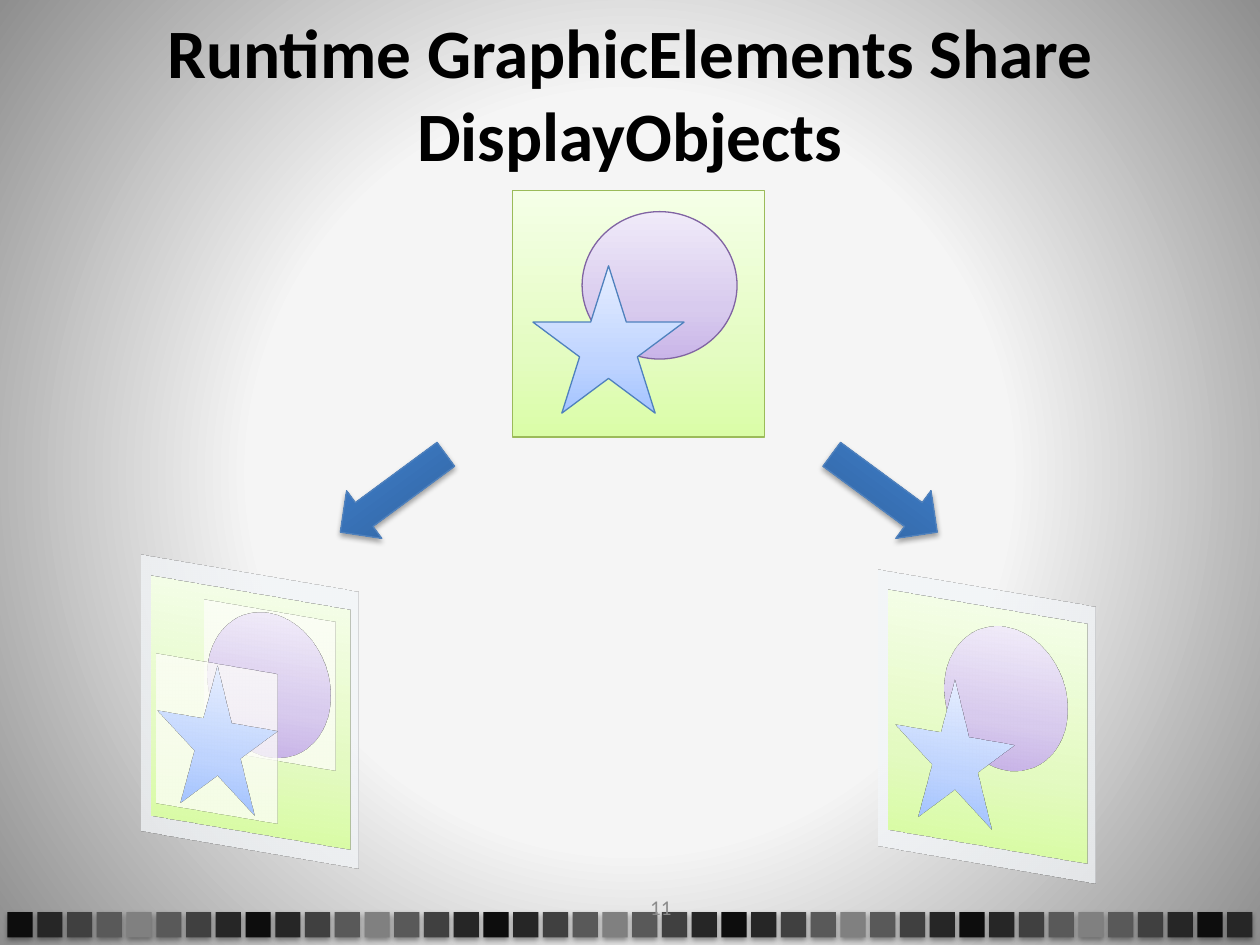
from lxml import etree
from pptx import Presentation
from pptx.dml.color import RGBColor
from pptx.enum.dml import MSO_LINE
from pptx.enum.shapes import MSO_SHAPE
from pptx.enum.text import MSO_ANCHOR, PP_ALIGN
from pptx.oxml import parse_xml
from pptx.oxml.ns import nsdecls
from pptx.util import Inches, Pt

BLACK = RGBColor(0x00, 0x00, 0x00)
NUMBER_GRAY = RGBColor(0x8C, 0x8C, 0x8C)
FRAME_GRAY = RGBColor(0xDA, 0xDD, 0xE0)
PANE_TAN = RGBColor(0xEE, 0xEC, 0xE1)
GREEN_LINE = RGBColor(0x9B, 0xBB, 0x59)
PURPLE_LINE = RGBColor(0x80, 0x64, 0xA2)
BLUE_LINE = RGBColor(0x4F, 0x81, 0xBD)
STRIP_GRAYS = [RGBColor(v, v, v) for v in
               (0x0D, 0x26, 0x40, 0x59, 0x80, 0x59, 0x40, 0x26)]

GREEN = [(0, "DAFDA7"), (35, "E4FCC2"), (100, "F5FFE7")]
PURPLE = [(0, "C9B5E8"), (35, "D8CBEE"), (100, "F0EAF9")]
BLUE = [(0, "A4C4FF"), (35, "BFD4FF"), (100, "E6EEFF")]
ARROW_BLUE = [(0, "2F5F99"), (80, "3D7CC7"), (100, "3A7CCB")]

SHADOW = """<a:effectLst %s><a:outerShdw blurRad="39000" dist="22000" dir="5400000"
 rotWithShape="0"><a:srgbClr val="000000"><a:alpha val="%d"/></a:srgbClr>
</a:outerShdw></a:effectLst>"""
SCENE = """<a:scene3d %s><a:camera prst="orthographicFront">
<a:rot lat="780000" lon="2250000" rev="0"/></a:camera>
<a:lightRig rig="threePt" dir="t"/></a:scene3d>"""


def gradient(stops, direction):
    stop_list = "".join(
        f'<a:gs pos="{position * 1000}"><a:srgbClr val="{color}"/></a:gs>'
        for position, color in stops)
    return parse_xml(f'<a:gradFill {nsdecls("a")} rotWithShape="1">'
                     f'<a:gsLst>{stop_list}</a:gsLst>{direction}</a:gradFill>')


def add_figure(kind, box, fill, line=None, tilted=False, shadow=0):
    """Add a shape; fill is a colour (half clear if tilted) or gradient stops."""
    shape = slide.shapes.add_shape(kind, *[Inches(value) for value in box])
    properties = shape._element.spPr
    if isinstance(fill, RGBColor):
        shape.fill.solid()
        shape.fill.fore_color.rgb = fill
        if tilted:
            color = properties.find(".//{*}srgbClr")
            etree.SubElement(color, color.tag.replace("srgbClr", "alpha"), val="50000")
    else:
        properties.insert(2, gradient(fill, '<a:lin ang="16200000" scaled="0"/>'))
    if line is None:
        shape.line.fill.background()
    else:
        shape.line.color.rgb = line
        shape.line.width = Pt(0.75)
        if line == BLACK:
            shape.line.width = Pt(1.5)
            shape.line.dash_style = MSO_LINE.DASH_DOT
    if shadow:
        properties.append(parse_xml(SHADOW % (nsdecls("a"), shadow * 1000)))
    else:
        shape.shadow.inherit = False
    if tilted:
        properties.append(parse_xml(SCENE % nsdecls("a")))
    return shape


presentation = Presentation()
presentation.slide_width = Inches(10)
presentation.slide_height = Inches(7.5)
slide = presentation.slides.add_slide(presentation.slide_layouts[5])

# Background
slide.background.fill.solid()
background = slide.background._cSld.bg.bgPr
background.replace(background[0], gradient(
    [(48, "F5F5F5"), (100, "8E8E8E")],
    '<a:path path="circle"><a:fillToRect l="50000" t="50000" r="50000" b="50000"/></a:path>'))

# Film strip along the bottom
for index in range(42):
    add_figure(MSO_SHAPE.RECTANGLE, (0.06 + index * 9.68 / 41, 7.24, 0.2, 0.2),
               STRIP_GRAYS[index % len(STRIP_GRAYS)], shadow=38)

# Title and slide number
title = slide.shapes.title
title.left, title.top, title.width, title.height = (
    Inches(0), Inches(0.13), Inches(10), Inches(1.2))
number = slide.shapes.add_textbox(Inches(4.83), Inches(7.11), Inches(0.83), Inches(0.18))
for shape, text, size, color, bold in (
        (title, "Runtime GraphicElements Share DisplayObjects", 39.6, BLACK, True),
        (number, "11", 12, NUMBER_GRAY, False)):
    frame = shape.text_frame
    frame.text = text
    frame.word_wrap = True
    frame.vertical_anchor = MSO_ANCHOR.MIDDLE
    paragraph = frame.paragraphs[0]
    paragraph.alignment = PP_ALIGN.CENTER
    paragraph.font.name = "Calibri"
    paragraph.font.size = Pt(size)
    paragraph.font.bold = bold
    paragraph.font.color.rgb = color

# Shared graphic
add_figure(MSO_SHAPE.RECTANGLE, (4.07, 1.51, 2, 1.96), GREEN, GREEN_LINE)
add_figure(MSO_SHAPE.OVAL, (4.62, 1.68, 1.23, 1.17), PURPLE, PURPLE_LINE)
add_figure(MSO_SHAPE.STAR_5_POINT, (4.23, 2.11, 1.2, 1.17), BLUE, BLUE_LINE)

# Arrows to both instances
for left, rotation in ((2.6, 323.6), (6.5, 36.4)):
    arrow = add_figure(MSO_SHAPE.LEFT_ARROW, (left, 3.68, 1.04, 0.47),
                       ARROW_BLUE, BLUE_LINE, shadow=35)
    arrow.rotation = rotation
    if rotation < 180:
        arrow._element.spPr.xfrm.set("flipH", "1")

# Tilted instances: the left one shows a pane behind each part
for kind, box, fill, line in (
        (MSO_SHAPE.RECTANGLE, (0.9, 4.52, 2.17, 2.25), FRAME_GRAY, BLACK),
        (MSO_SHAPE.RECTANGLE, (1, 4.68, 1.99, 1.95), GREEN, GREEN_LINE),
        (MSO_SHAPE.RECTANGLE, (1.49, 4.83, 1.31, 1.21), PANE_TAN, BLACK),
        (MSO_SHAPE.OVAL, (1.52, 4.85, 1.23, 1.17), PURPLE, PURPLE_LINE),
        (MSO_SHAPE.RECTANGLE, (1.12, 5.25, 1.21, 1.22), PANE_TAN, BLACK),
        (MSO_SHAPE.STAR_5_POINT, (1.13, 5.27, 1.2, 1.17), BLUE, BLUE_LINE),
        (MSO_SHAPE.RECTANGLE, (6.75, 4.64, 2.17, 2.25), FRAME_GRAY, BLACK),
        (MSO_SHAPE.RECTANGLE, (6.85, 4.79, 1.99, 1.95), GREEN, GREEN_LINE),
        (MSO_SHAPE.OVAL, (7.37, 4.96, 1.23, 1.17), PURPLE, PURPLE_LINE),
        (MSO_SHAPE.STAR_5_POINT, (6.98, 5.38, 1.2, 1.17), BLUE, BLUE_LINE)):
    add_figure(kind, box, fill, line, tilted=True)

presentation.save("out.pptx")
